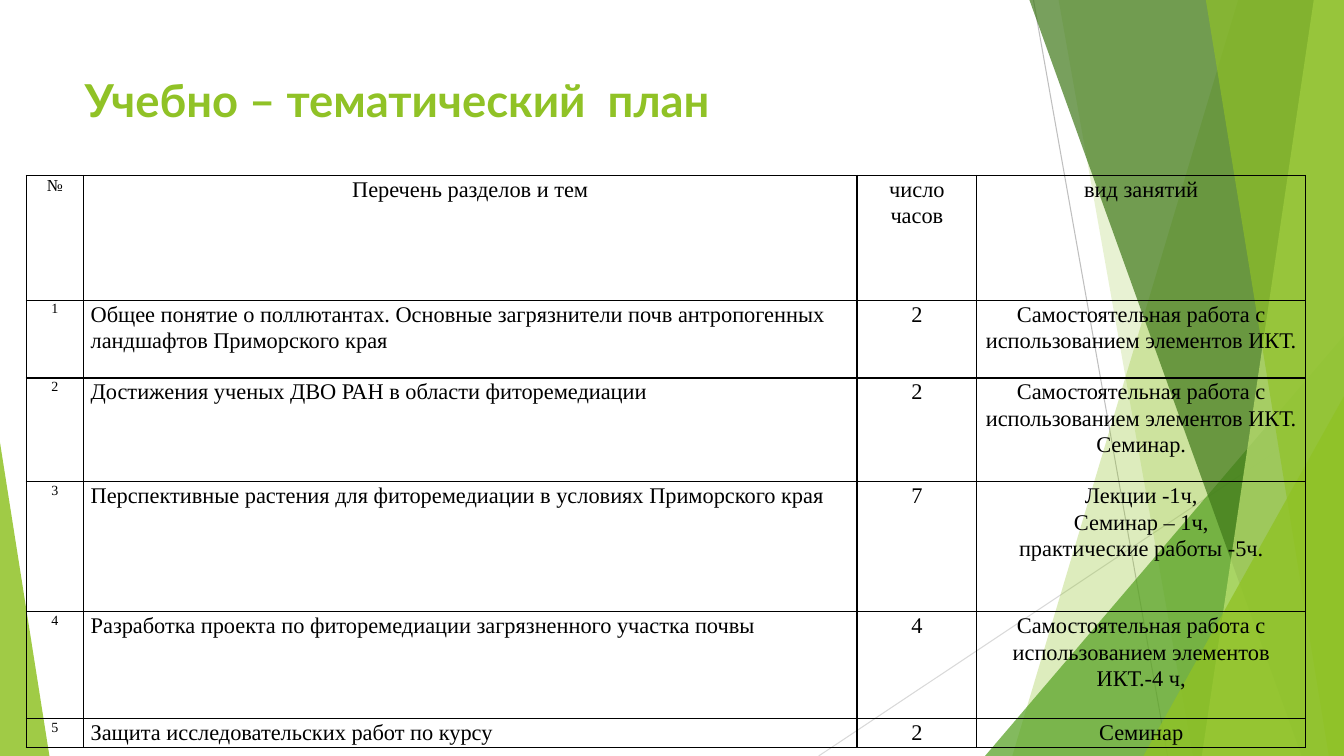
import pptx
import pptx.util
import pptx.dml.color
import pptx.enum.shapes
import pptx.enum.text
import pptx.oxml
import pptx.oxml.ns

Inches = pptx.util.Inches
Pt = pptx.util.Pt
RGBColor = pptx.dml.color.RGBColor
CENTER = pptx.enum.text.PP_ALIGN.CENTER
LEFT = pptx.enum.text.PP_ALIGN.LEFT

WIDTH, HEIGHT = 13.33, 7.5
LIME = RGBColor(0x90, 0xC2, 0x26)
PALE_LIME = RGBColor(0xC0, 0xE4, 0x74)
GREEN = RGBColor(0x54, 0xA0, 0x21)
DARK_GREEN = RGBColor(0x3F, 0x78, 0x19)
GREY = RGBColor(0xBF, 0xBF, 0xBF)
LIGHT_GREY = RGBColor(0xD9, 0xD9, 0xD9)
BLACK = RGBColor(0, 0, 0)

COLUMNS = [0.57, 7.67, 1.19, 3.26]
ROW_HEIGHTS = [1.24, 0.77, 1.03, 1.29, 1.06, 0.26]
HEADER = ["№", "Перечень разделов и тем", "число часов", "вид занятий"]
ICT_WORK = "Самостоятельная работа с использованием элементов ИКТ."
TOPICS = [
    ("Общее понятие о поллютантах. Основные загрязнители почв "
     "антропогенных ландшафтов Приморского края", "2", ICT_WORK),
    ("Достижения ученых ДВО РАН в области фиторемедиации", "2",
     ICT_WORK + "\nСеминар."),
    ("Перспективные растения для фиторемедиации в условиях Приморского края",
     "7", "Лекции -1ч,\nСеминар – 1ч,\nпрактические работы -5ч."),
    ("Разработка проекта по фиторемедиации загрязненного участка почвы", "4",
     ICT_WORK + "-4 ч,"),
    ("Защита исследовательских работ по курсу", "2", "Семинар"),
]


def add_xml(parent, tag, content="", attrs=""):
    ns = pptx.oxml.ns.nsdecls("a")
    parent.append(pptx.oxml.parse_xml(
        f"<a:{tag} {ns} {attrs}>{content}</a:{tag}>"))


def paint(sp, color, opacity):
    """Fill a shape with a colour at the given opacity in percent."""
    sp.shadow.inherit = False
    sp.line.fill.background()
    sp.fill.solid()
    sp.fill.fore_color.rgb = color
    srgb = sp.fill._xPr.find(".//" + pptx.oxml.ns.qn("a:srgbClr"))
    add_xml(srgb, "alpha", attrs=f'val="{opacity * 1000}"')


def add_line(s, start, end, color):
    line = s.shapes.add_connector(
        pptx.enum.shapes.MSO_CONNECTOR.STRAIGHT,
        *[Inches(v) for v in start + end])
    line.line.color.rgb = color
    line.line.width = Pt(0.75)
    add_xml(line._element.spPr, "effectLst")


def add_band(s, top_x, bottom_x, color, opacity):
    """Add a full-height band from a slanted left edge to the slide's edge."""
    right, bottom = Inches(WIDTH), Inches(HEIGHT)
    outline = s.shapes.build_freeform(Inches(top_x), 0)
    outline.add_line_segments(
        [(right, 0), (right, bottom), (Inches(bottom_x), bottom)], close=True)
    paint(outline.convert_to_shape(), color, opacity)


def add_triangle(s, left, top, width, apex, color, opacity):
    """Add a triangle standing on the slide's bottom edge."""
    sp = s.shapes.add_shape(
        pptx.enum.shapes.MSO_SHAPE.ISOSCELES_TRIANGLE, Inches(left),
        Inches(top), Inches(width), Inches(HEIGHT - top))
    sp.adjustments[0] = apex
    paint(sp, color, opacity)


def add_backdrop(s):
    add_line(s, (10.25, 0), (11.58, HEIGHT), GREY)
    add_line(s, (WIDTH, 4.03), (8.12, HEIGHT), LIGHT_GREY)
    add_band(s, 12.28, 10.04, LIME, 30)
    add_band(s, 10.5, 11.83, LIME, 20)
    add_triangle(s, 9.77, 3.33, 3.56, 1, GREEN, 72)
    add_band(s, 10.21, 12.91, DARK_GREEN, 70)
    add_band(s, 13.03, 11.92, PALE_LIME, 70)
    add_band(s, 11.96, 13.18, LIME, 65)
    add_triangle(s, 11.34, 3.93, 1.99, 1, LIME, 80)
    add_triangle(s, 0, 4.39, 0.49, 0, LIME, 85)


def add_run(p, text, font, size, color, bold=False):
    r = p.add_run()
    r.text = text
    r.font.name = font
    r.font.size = Pt(size)
    r.font.color.rgb = color
    r.font.bold = bold


def add_title(s, text):
    box = s.shapes.add_textbox(
        Inches(0.74), Inches(0.67), Inches(9.4), Inches(0.88))
    tf = box.text_frame
    tf.word_wrap = True
    add_run(tf.paragraphs[0], text, "Lato", 32.4, LIME, bold=True)


def add_borders(cell):
    tc_pr = cell._tc.get_or_add_tcPr()
    for side in ("lnL", "lnR", "lnT", "lnB"):
        add_xml(tc_pr, side,
                f'<a:solidFill><a:srgbClr val="{BLACK}"/></a:solidFill>',
                f'w="{Pt(1)}"')


def fill_cell(cell, text, size, align, space_after):
    cell.margin_left = cell.margin_right = Inches(0.07)
    cell.margin_top = cell.margin_bottom = 0
    add_borders(cell)
    cell.fill.background()
    tf = cell.text_frame
    for i, line in enumerate(text.split("\n")):
        p = tf.add_paragraph() if i else tf.paragraphs[0]
        p.alignment = align
        p.line_spacing = 1.07
        p.space_after = Pt(space_after)
        add_run(p, line, "Times New Roman", size, BLACK)


def add_plan(s):
    rows = [HEADER] + [(str(n), *topic) for n, topic in enumerate(TOPICS, 1)]
    frame = s.shapes.add_table(
        len(rows), len(COLUMNS), Inches(0.26), Inches(1.74),
        Inches(sum(COLUMNS)), Inches(sum(ROW_HEIGHTS)))
    table = frame.table
    table.first_row = table.horz_banding = False
    for column, width in zip(table.columns, COLUMNS):
        column.width = Inches(width)
    for i, row in enumerate(rows):
        table.rows[i].height = Inches(ROW_HEIGHTS[i])
        for j, text in enumerate(row):
            is_header, is_number = i == 0, j == 0
            size = (12 if is_header else 10) if is_number else 16
            align = LEFT if j == 1 and not is_header else CENTER
            space_after = 8 if is_header or is_number else 0
            fill_cell(table.cell(i, j), text, size, align, space_after)


def main():
    prs = pptx.Presentation()
    prs.slide_width, prs.slide_height = Inches(WIDTH), Inches(HEIGHT)
    s = prs.slides.add_slide(prs.slide_layouts[6])
    add_backdrop(s)
    add_title(s, "Учебно – тематический  план")
    add_plan(s)
    prs.save("out.pptx")


if __name__ == "__main__":
    main()
